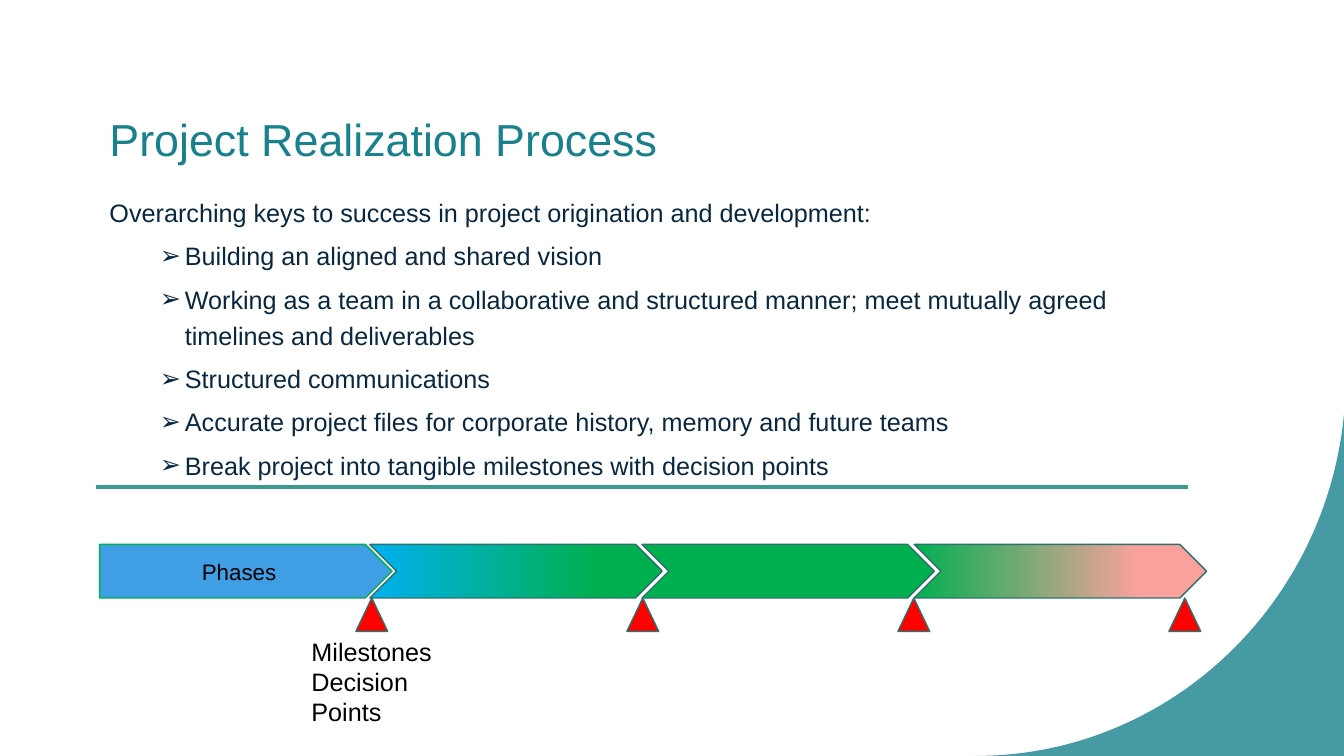
from lxml import etree
from pptx import Presentation
from pptx import util as u
from pptx.dml.color import RGBColor
from pptx.enum import shapes, text
from pptx.oxml import ns

TEAL = RGBColor(0x18, 0x81, 0x8C)
RULE_TEAL = RGBColor(0x3C, 0x9A, 0x8F)
EDGE_TEAL = RGBColor(0x2C, 0x72, 0x6A)
NAVY = RGBColor(0x09, 0x28, 0x3F)
BLACK = RGBColor(0, 0, 0)
BLUE = RGBColor(0x3F, 0x9E, 0xE4)
SKY = RGBColor(0x00, 0xB0, 0xF0)
GREEN = RGBColor(0x00, 0xB0, 0x50)
PINK = RGBColor(0xFA, 0xA1, 0x9D)
RED = RGBColor(0xFF, 0, 0)

SHAPE = shapes.MSO_SHAPE
KEYS = [
    "Building an aligned and shared vision",
    "Working as a team in a collaborative and structured manner; "
    "meet mutually agreed timelines and deliverables",
    "Structured communications",
    "Accurate project files for corporate history, memory and future teams",
    "Break project into tangible milestones with decision points",
]


class SlideWriter:
    font = "Arial"

    def __init__(self, slide):
        self.slide = slide

    def style(self, paragraph, size, color):
        for run in paragraph.runs:
            run.font.name = self.font
            run.font.size = u.Pt(size)
            run.font.color.rgb = color

    def text_box(self, box, lines, size, color, anchor=text.MSO_ANCHOR.TOP):
        frame = self.slide.shapes.add_textbox(*map(u.Cm, box)).text_frame
        frame.word_wrap = True
        frame.vertical_anchor = anchor
        frame.text = "\n".join(lines)
        for paragraph in frame.paragraphs:
            self.style(paragraph, size, color)
        return frame

    def bullet(self, paragraph, mark):
        props = paragraph._p.get_or_add_pPr()
        props.set("marL", str(u.Cm(1.9)))
        props.set("indent", str(u.Cm(-0.63)))
        etree.SubElement(props, ns.qn("a:buFont")).set("typeface", self.font)
        etree.SubElement(props, ns.qn("a:buChar")).set("char", mark)

    def shape(self, kind, box, colors, edge=EDGE_TEAL):
        shape = self.slide.shapes.add_shape(kind, *map(u.Cm, box))
        shape.shadow.inherit = False
        if len(colors) == 1:
            shape.fill.solid()
            shape.fill.fore_color.rgb = colors[0]
        else:
            shape.fill.gradient()
            shape.fill.gradient_angle = 0
            for stop, position, color in zip(shape.fill.gradient_stops, (0, 0.77), colors):
                stop.position = position
                stop.color.rgb = color
        shape.line.color.rgb = edge
        shape.line.width = u.Pt(1)
        return shape

    def rule(self, left, right, y, color, width):
        line = self.slide.shapes.add_connector(
            shapes.MSO_CONNECTOR.STRAIGHT, u.Cm(left), u.Cm(y), u.Cm(right), u.Cm(y))
        line.line.color.rgb = color
        line.line.width = u.Pt(width)
        etree.SubElement(line._element.spPr, ns.qn("a:effectLst"))

    def curved_corner(self, curve, corner, color, opacity, steps=60):
        points = []
        for step in range(steps + 1):
            t = step / steps
            weights = ((1 - t) ** 3, 3 * t * (1 - t) ** 2, 3 * t * t * (1 - t), t ** 3)
            points.append(tuple(
                u.Cm(sum(w * p[axis] for w, p in zip(weights, curve))) for axis in (0, 1)))
        points.append(tuple(map(u.Cm, corner)))
        builder = self.slide.shapes.build_freeform(*points[0])
        builder.add_line_segments(points[1:], close=True)
        shape = builder.convert_to_shape()
        shape.shadow.inherit = False
        shape.fill.solid()
        shape.fill.fore_color.rgb = color
        shape.line.fill.background()
        rgb = shape._element.spPr.find(".//" + ns.qn("a:srgbClr"))
        etree.SubElement(rgb, ns.qn("a:alpha")).set("val", str(opacity * 1000))


def main():
    deck = Presentation()
    deck.slide_width, deck.slide_height = u.Cm(33.87), u.Cm(19.05)
    writer = SlideWriter(deck.slides.add_slide(deck.slide_layouts[6]))

    writer.curved_corner(
        [(24.59, 19.05), (29.41, 19.05), (33.4, 15.29), (33.87, 10.45)],
        (33.87, 19.05), TEAL, 80)
    writer.text_box((2.51, 1.65, 27.53, 3.68), ["Project Realization Process"],
                    32, TEAL, text.MSO_ANCHOR.MIDDLE)

    intro = "Overarching keys to success in project origination and development:"
    body = writer.text_box((2.51, 4.7, 27.53, 11.46), [intro] + KEYS, 18, NAVY)
    for index, paragraph in enumerate(body.paragraphs):
        paragraph.line_spacing = 1.2
        paragraph.space_before = u.Pt(5 if index else 10)
        if index:
            writer.bullet(paragraph, "➢")

    writer.rule(2.41, 29.95, 12.27, RULE_TEAL, 2.25)

    phase_top, phase_width, phase_height = 13.72, 7.37, 1.35
    phases = writer.shape(SHAPE.PENTAGON, (2.51, phase_top, phase_width, phase_height),
                          [BLUE], GREEN)
    phases.text_frame.text = "Phases"
    phases.text_frame.vertical_anchor = text.MSO_ANCHOR.MIDDLE
    phases_label = phases.text_frame.paragraphs[0]
    phases_label.alignment = text.PP_ALIGN.CENTER
    writer.style(phases_label, 16, BLACK)

    for index, colors in enumerate([(SKY, GREEN), (GREEN,), (GREEN, PINK)]):
        left = 9.32 + 6.86 * index
        writer.shape(SHAPE.CHEVRON, (left, phase_top, phase_width, phase_height), colors)

    for index in range(4):
        left = 8.97 + 6.83 * index
        writer.shape(SHAPE.ISOSCELES_TRIANGLE, (left, 15.07, 0.8, 0.84), [RED])

    writer.text_box((7.6, 15.9, 4.1, 2.6), ["Milestones", "Decision Points"], 18, BLACK)
    deck.save("out.pptx")


if __name__ == "__main__":
    main()
